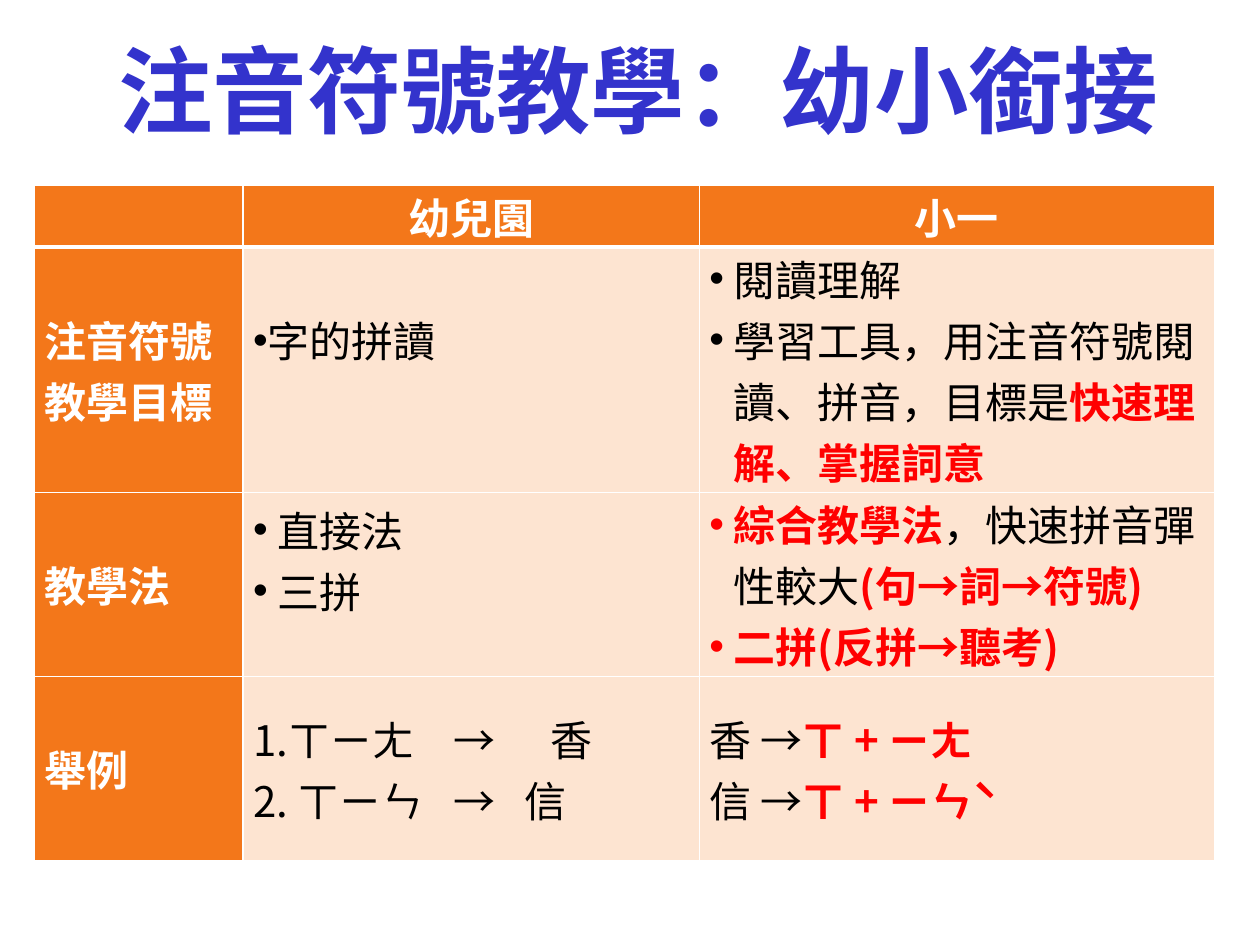
"""Build the slide comparing zhuyin teaching in kindergarten and first grade."""
from lxml.etree import SubElement
from pptx import Presentation
from pptx.dml.color import RGBColor
from pptx.enum.text import MSO_ANCHOR, MSO_AUTO_SIZE, PP_ALIGN
from pptx.oxml.ns import qn
from pptx.util import Inches, Pt

ORANGE, PEACH, WHITE, BLACK, RED, BLUE = "F3771A", "FDE4D1", "FFFFFF", "000000", "FF0000", "3333CC"


def color(code):
    return RGBColor.from_string(code)


def set_font(para, name, size, code, bold):
    font = para.font
    font.name, font.size, font.bold = name, Pt(size), bold
    font.color.rgb = color(code)
    defaults = para._p.pPr.find(qn("a:defRPr"))
    SubElement(defaults, qn("a:ea"), typeface=name)


deck = Presentation()
deck.slide_width, deck.slide_height = Inches(10), Inches(7.5)
page = deck.slides.add_slide(deck.slide_layouts[5])

title = page.shapes.title
title.left, title.top, title.width, title.height = Inches(0.84), Inches(0.2), Inches(8.74), Inches(1.01)
title.text_frame.text = "注音符號教學：幼小銜接"
title.text_frame.auto_size = MSO_AUTO_SIZE.NONE
title.text_frame.vertical_anchor = MSO_ANCHOR.MIDDLE
heading = title.text_frame.paragraphs[0]
heading.alignment = PP_ALIGN.LEFT
set_font(heading, "Noto Sans CJK SC", 54, BLUE, True)

column_widths = [1.66, 3.62, 4.09]
row_heights = [0.49, 1.95, 1.46, 1.46]
contents = [
    [[], ["幼兒園"], ["小一"]],
    [["注音符號教學目標"], ["字的拼讀"],
     ["閱讀理解", "學習工具，用注音符號閱讀、拼音，目標是|快速理解、掌握詞意"]],
    [["教學法"], ["直接法", "三拼"],
     ["|綜合教學法|，快速拼音彈性較大|(句→詞→符號)", "|二拼(反拼→聽考)"]],
    [["舉例"], ["1.ㄒㄧㄤ\t→\t香", "2. ㄒㄧㄣ\t→\t信"],
     ["香 →|ㄒ + ㄧㄤ", "信 →|ㄒ + ㄧㄣˋ"]],
]
bullet_indents = {(1, 1): 0.1, (1, 2): 0.19, (2, 1): 0.19, (2, 2): 0.19}
bottom_margins = {(1, 1): 0.48, (2, 1): 0.4}
example_tabs = [(1.59, 2.36), (1.59, 2.15)]

frame = page.shapes.add_table(4, 3, Inches(0.27), Inches(1.47),
                              Inches(sum(column_widths)), Inches(sum(row_heights)))
table = frame.table
for column, width in zip(table.columns, column_widths):
    column.width = Inches(width)
for row, height in zip(table.rows, row_heights):
    row.height = Inches(height)

for row_index, row_contents in enumerate(contents):
    for column_index, lines in enumerate(row_contents):
        place = row_index, column_index
        is_heading = 0 in place
        cell = table.cell(row_index, column_index)
        cell.vertical_anchor = MSO_ANCHOR.MIDDLE
        cell.margin_left = cell.margin_right = Inches(0.08)
        cell.margin_top = 0
        cell.margin_bottom = Inches(bottom_margins.get(place, 0))

        properties = cell._tc.get_or_add_tcPr()
        for side in ("L", "R", "T", "B"):
            thick = (row_index, side) in ((0, "B"), (1, "T"))
            border = SubElement(properties, qn(f"a:ln{side}"), w=str(Pt(3 if thick else 1)))
            SubElement(SubElement(border, qn("a:solidFill")), qn("a:srgbClr"), val=WHITE)
        cell.fill.solid()
        cell.fill.fore_color.rgb = color(ORANGE if is_heading else PEACH)

        for line_index, line in enumerate(lines):
            text = cell.text_frame
            para = text.add_paragraph() if line_index else text.paragraphs[0]
            para.alignment = PP_ALIGN.CENTER if row_index == 0 else PP_ALIGN.LEFT
            settings = para._p.get_or_add_pPr()
            if place in bullet_indents:
                indent = Inches(bullet_indents[place])
                settings.set("marL", str(indent))
                settings.set("indent", str(-indent))
                SubElement(settings, qn("a:buFont"), typeface="Arial")
                SubElement(settings, qn("a:buChar"), char="•")
            if "\t" in line:
                tabs = SubElement(settings, qn("a:tabLst"))
                for stop in example_tabs[line_index]:
                    SubElement(tabs, qn("a:tab"), pos=str(Inches(stop)), algn="l")
            set_font(para, "Noto Sans CJK TC", 24, WHITE if is_heading else BLACK, is_heading)
            for part_index, part in enumerate(line.split("|")):
                if part:
                    span = para.add_run()
                    span.text = part
                    if part_index % 2:
                        span.font.bold = True
                        span.font.color.rgb = color(RED)

deck.save("out.pptx")
